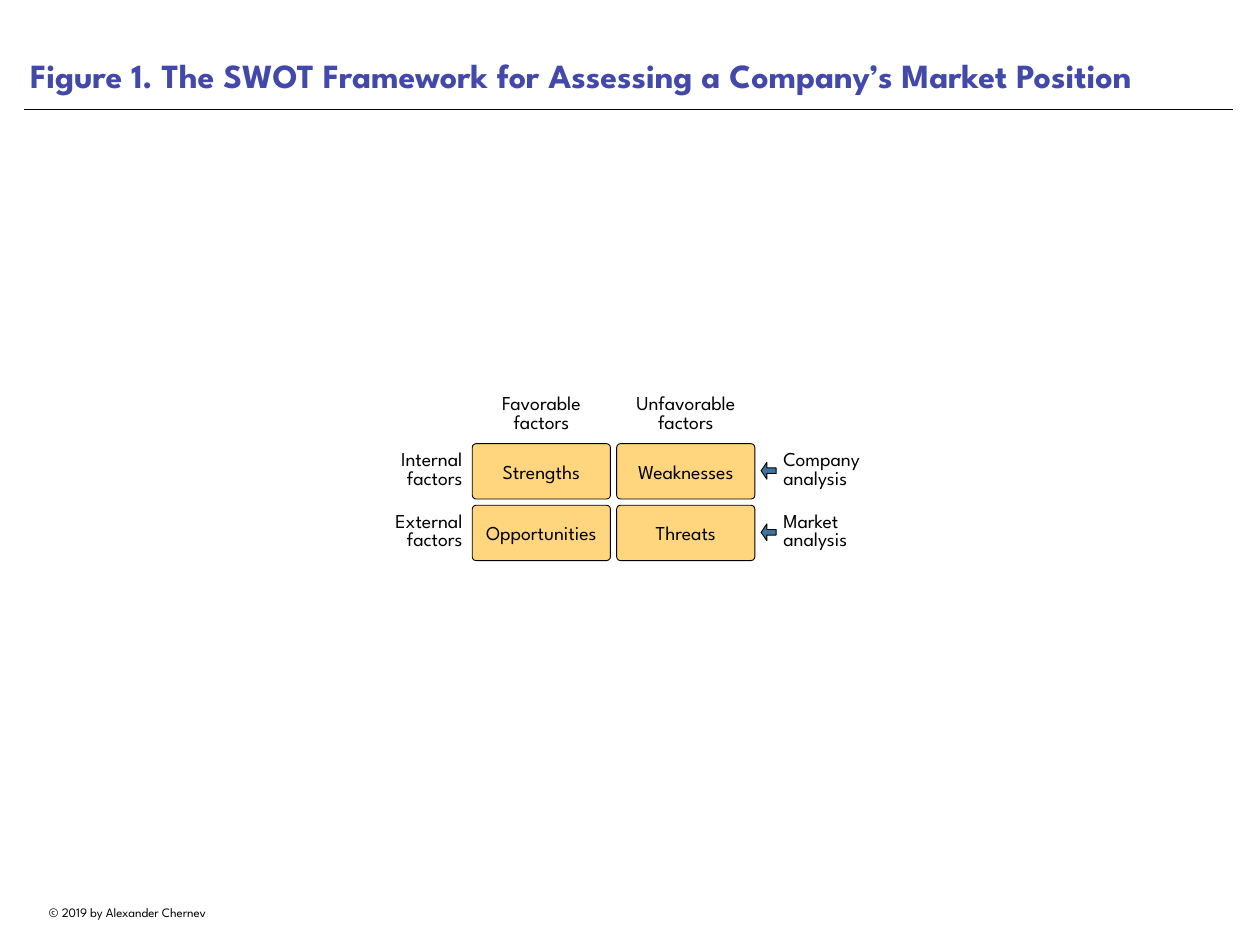
from pptx import Presentation
from pptx.dml.color import RGBColor
from pptx.enum.shapes import MSO_CONNECTOR, MSO_SHAPE
from pptx.enum.text import MSO_ANCHOR, MSO_AUTO_SIZE, PP_ALIGN
from pptx.oxml.ns import qn
from pptx.util import Inches, Pt
from lxml import etree

LEFT, CENTER, RIGHT = PP_ALIGN.LEFT, PP_ALIGN.CENTER, PP_ALIGN.RIGHT
MIDDLE, BOTTOM = MSO_ANCHOR.MIDDLE, MSO_ANCHOR.BOTTOM
ROUNDED, ARROW = MSO_SHAPE.ROUNDED_RECTANGLE, MSO_SHAPE.LEFT_ARROW
STRAIGHT, NO_AUTOFIT = MSO_CONNECTOR.STRAIGHT, MSO_AUTO_SIZE.NONE

FONT = "League Spartan"
BLACK, INDIGO, AMBER, STEEL = "000000", "4349AA", "FFD67E", "3D749D"

COLUMNS = ["Favorable factors", "Unfavorable factors"]
ROWS = [
    ("Internal factors", ["Strengths", "Weaknesses"], "Company analysis"),
    ("External factors", ["Opportunities", "Threats"], "Market analysis"),
]


def rgb(color):
    return RGBColor.from_string(color)


def write(sp, text, size=16, color=BLACK, bold=False, align=LEFT,
          anchor=MIDDLE, spacing=1.0, inset=0.04, wrap=True):
    tf = sp.text_frame
    tf.auto_size = NO_AUTOFIT
    tf.word_wrap = wrap
    tf.vertical_anchor = anchor
    tf.margin_left = tf.margin_right = Inches(inset)
    tf.margin_top = tf.margin_bottom = Inches(inset)
    p = tf.paragraphs[0]
    p.alignment = align
    p.line_spacing = spacing
    r = p.add_run()
    r.text = text
    r.font.name = FONT
    r.font.size = Pt(size)
    r.font.bold = bold
    r.font.color.rgb = rgb(color)


def add_label(s, text, x, y, w, h=0.58, **fmt):
    sp = s.shapes.add_textbox(Inches(x), Inches(y), Inches(w), Inches(h))
    write(sp, text, **fmt)


def add_outlined(s, kind, x, y, w, h, fill, adjustments):
    sp = s.shapes.add_shape(kind, Inches(x), Inches(y), Inches(w), Inches(h))
    sp.shadow.inherit = False
    sp.fill.solid()
    sp.fill.fore_color.rgb = rgb(fill)
    sp.line.color.rgb = rgb(BLACK)
    sp.line.width = Pt(0.75)
    for i, value in enumerate(adjustments):
        sp.adjustments[i] = value
    return sp


def add_header(s, text, x, y, w, h):
    """Fill the title placeholder and rule a line below it."""
    title = s.shapes.title
    title.left, title.top = Inches(x), Inches(y)
    title.width, title.height = Inches(w), Inches(h)
    write(title, text, size=27.5, color=INDIGO, bold=True,
          anchor=BOTTOM, inset=0.07)
    rule_y = Inches(y + h + 0.09)
    rule = s.shapes.add_connector(STRAIGHT, Inches(x), rule_y,
                                  Inches(x + w - 0.18), rule_y)
    rule.line.color.rgb = rgb(BLACK)
    rule.line.width = Pt(0.5)
    etree.SubElement(rule._element.spPr, qn("a:effectLst"))


def add_swot(s, x, y, w, h, gap=0.07):
    """Place the 2 x 2 matrix in the box, with its labels around it."""
    cell_w, cell_h = (w - gap) / 2, (h - gap) / 2
    for col, heading in enumerate(COLUMNS):
        add_label(s, heading, x + 0.07 + col * (cell_w + gap), y - 0.62, 1.42,
                  align=CENTER, spacing=0.8)
    for row, (factor, cells, analysis) in enumerate(ROWS):
        top = y + row * (cell_h + gap)
        add_label(s, factor, x - 1.13, top + 0.01, 1.06,
                  align=RIGHT, spacing=0.8)
        for col, text in enumerate(cells):
            sp = add_outlined(s, ROUNDED, x + col * (cell_w + gap), top,
                              cell_w, cell_h, AMBER, [0.07])
            write(sp, text, align=CENTER)
        add_outlined(s, ARROW, x + w + 0.07, top + 0.21, 0.17, 0.19,
                     STEEL, [0.33, 0.38])
        add_label(s, analysis, x + w + 0.28, top + 0.01, 1.22, spacing=0.8)


def main():
    prs = Presentation()
    prs.slide_width, prs.slide_height = Inches(14.22), Inches(10.67)
    s = prs.slides.add_slide(prs.slide_layouts[5])
    add_header(s, "Figure 1. The SWOT Framework for Assessing a Company’s "
                  "Market Position", 0.27, 0, 13.83, 1.15)
    add_swot(s, 5.33, 5.01, 3.19, 1.32)
    add_label(s, "© 2019 by Alexander Chernev", 0.27, 10.16, 2.34, 0.28,
              size=10.5, align=CENTER, wrap=False)
    prs.save("out.pptx")


if __name__ == "__main__":
    main()
